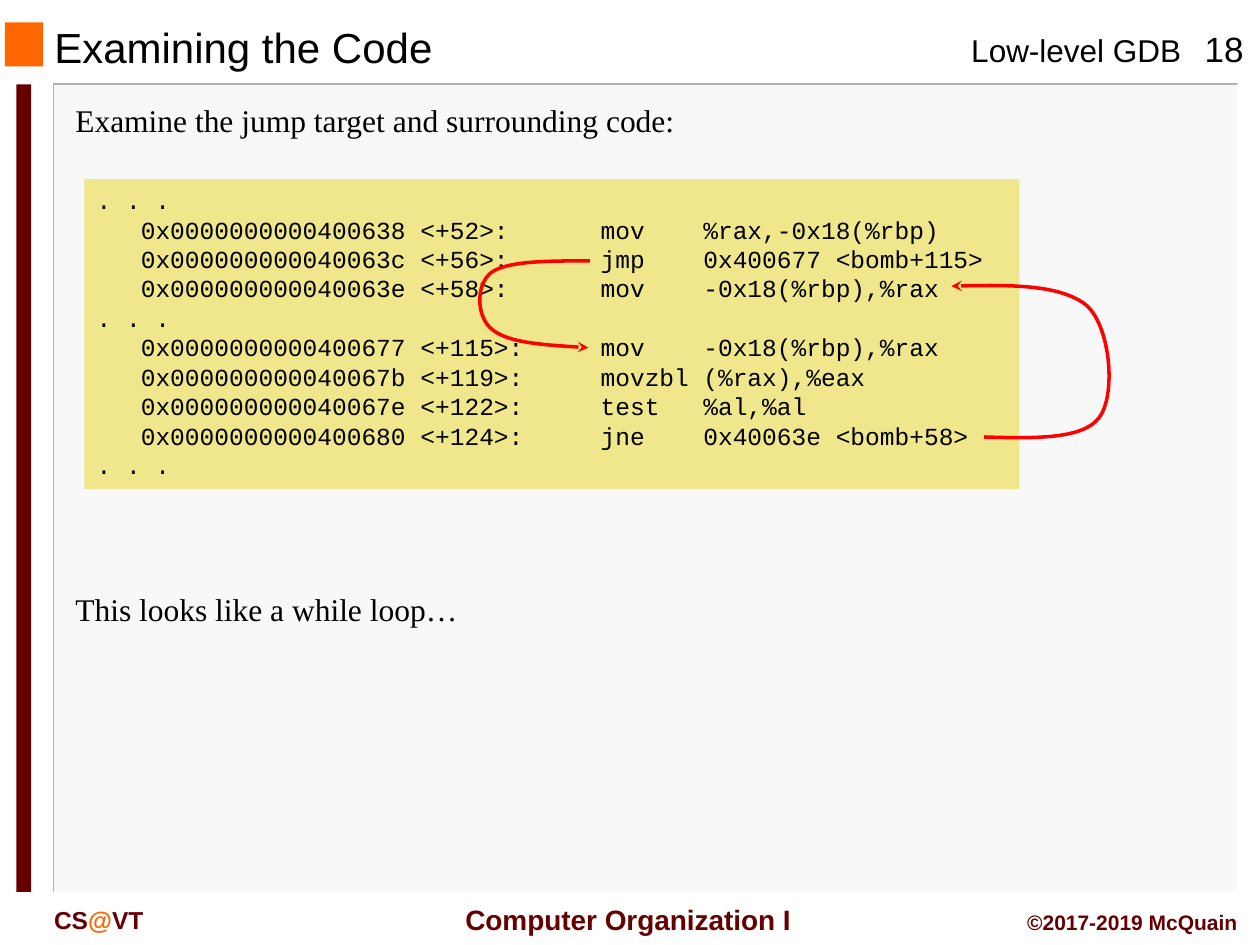
from lxml import etree
from pptx import Presentation
from pptx.dml.color import RGBColor
from pptx.enum.shapes import MSO_SHAPE
from pptx.enum.text import MSO_ANCHOR as Anchor, MSO_AUTO_SIZE as AutoSize, PP_ALIGN as Align
from pptx.oxml.ns import qn
from pptx.util import Cm, Pt

THEME = {
    "text": "000000", "maroon": "660000", "orange": "FF6600", "panel": "F8F8F8",
    "shade": "B2B2B2", "light": "FFFFFF", "code": "F0E68C", "arrow": "FF0000",
    "sans": "Arial", "serif": "Times New Roman", "mono": "Courier New",
    "title_size": 24, "number_size": 20, "body_size": 18, "course_size": 16,
    "code_size": 14, "credit_size": 12,
}

TITLE = "Examining the Code"
TOPIC = "Low-level GDB"
PAGE = "18"
COURSE = "Computer Organization I"
DEPARTMENT = [("CS", "maroon"), ("@", "orange"), ("VT", "maroon")]
CREDIT = "©2017-2019 McQuain"
INTRO = "Examine the jump target and surrounding code:"
CONCLUSION = "This looks like a while loop…"

GAP = (". . .",)
LISTING = [
    GAP,
    ("0x0000000000400638 <+52>:", "mov", "%rax,-0x18(%rbp)"),
    ("0x000000000040063c <+56>:", "jmp", "0x400677 <bomb+115>"),
    ("0x000000000040063e <+58>:", "mov", "-0x18(%rbp),%rax"),
    GAP,
    ("0x0000000000400677 <+115>:", "mov", "-0x18(%rbp),%rax"),
    ("0x000000000040067b <+119>:", "movzbl", "(%rax),%eax"),
    ("0x000000000040067e <+122>:", "test", "%al,%al"),
    ("0x0000000000400680 <+124>:", "jne", "0x40063e <bomb+58>"),
    GAP,
]
LISTING_STOPS = (0.89, 10.16, 12.23)  # address, instruction, operands

# Start point, then two control points and an end point per curve, in cm
JUMPS = [
    [(11.89, 5.26), (11.05, 5.26), (10.24, 5.26), (9.91, 5.49),
     (9.58, 5.74), (9.6, 6.4), (9.93, 6.65),
     (10.26, 6.91), (11.05, 6.96), (11.86, 7.01)],
    [(19.84, 8.81), (20.83, 8.84), (21.82, 8.86), (22.15, 8.43),
     (22.5, 8.0), (22.4, 6.63), (21.92, 6.17),
     (21.41, 5.74), (20.29, 5.74), (19.18, 5.77)],
]

PANEL = (1.08, 1.7, 23.88, 16.28)


def color(name):
    return RGBColor.from_string(THEME[name])


def write(shape, paragraphs, *, size, font="sans", ink="text", bold=False,
          align=Align.LEFT, anchor=Anchor.TOP, wrap=True):
    """Fill a shape with paragraphs: each a string or a list of (text, colour) runs."""
    frame = shape.text_frame
    frame.word_wrap, frame.auto_size, frame.vertical_anchor = wrap, AutoSize.NONE, anchor
    for index, content in enumerate(paragraphs):
        paragraph = frame.add_paragraph() if index else frame.paragraphs[0]
        paragraph.alignment = align
        for words, run_ink in [(content, ink)] if isinstance(content, str) else content:
            run = paragraph.add_run()
            run.text = words
            run.font.name, run.font.size, run.font.bold = THEME[font], Pt(THEME[size]), bold
            run.font.color.rgb = color(run_ink)
    return frame


def add_text(slide, box, content, **style):
    return write(slide.shapes.add_textbox(*map(Cm, box)), [content], **style)


def add_block(slide, box, fill):
    block = slide.shapes.add_shape(MSO_SHAPE.RECTANGLE, *map(Cm, box))
    block.shadow.inherit = False
    block.fill.solid()
    block.fill.fore_color.rgb = color(fill)
    block.line.fill.background()
    return block


def add_path(slide, points, ink, width):
    """Draw an open, unfilled outline through points given in cm."""
    start, *rest = [(Cm(x), Cm(y)) for x, y in points]
    builder = slide.shapes.build_freeform(*start)
    builder.add_line_segments(rest, close=False)
    outline = builder.convert_to_shape()
    outline.shadow.inherit = False
    outline.fill.background()
    outline.line.color.rgb = color(ink)
    outline.line.width = Pt(width)
    return outline


def add_jump(slide, points):
    """Draw a curved arrow by joining each three segments into one Bézier curve."""
    arrow = add_path(slide, points, "arrow", 2)
    segments = list(arrow._element.iter(qn("a:lnTo")))
    for first in range(0, len(segments), 3):
        curve = etree.Element(qn("a:cubicBezTo"))
        segments[first].addprevious(curve)
        for segment in segments[first:first + 3]:
            curve.append(segment[0])
            segment.getparent().remove(segment)
    etree.SubElement(arrow.line._get_or_add_ln(), qn("a:tailEnd"), type="stealth")


def add_listing(slide, box):
    lines = [parts[0] if parts is GAP else "\t" + "\t".join(parts) for parts in LISTING]
    frame = write(add_block(slide, box, "code"), lines, size="code_size", font="mono")
    for paragraph in frame.paragraphs:
        stops = etree.SubElement(paragraph._p.get_or_add_pPr(), qn("a:tabLst"))
        for stop in LISTING_STOPS:
            etree.SubElement(stops, qn("a:tab"), pos=str(Cm(stop)), algn="l")


def add_frame(slide):
    left, top, width, height = PANEL
    right, bottom = left + width, top + height
    add_block(slide, PANEL, "panel")
    add_path(slide, [(right, top), (left, top), (left, bottom)], "shade", 1)
    add_path(slide, [(right, top), (right, bottom), (left, bottom)], "light", 1)
    add_block(slide, (0.1, 0.45, 0.77, 0.89), "orange")
    add_block(slide, (0.33, top, 0.3, height), "maroon")
    add_text(slide, (19.33, 0.51, 4.8, 1.02), TOPIC, size="body_size", wrap=False)
    add_text(slide, (23.83, 0.43, 1.7, 1.09), PAGE, size="number_size", align=Align.CENTER)
    footer = {"ink": "maroon", "bold": True}
    add_text(slide, (8.92, 18.06, 7.49, 0.94), COURSE, size="course_size",
             align=Align.CENTER, anchor=Anchor.MIDDLE, wrap=False, **footer)
    add_text(slide, (0.84, 18.11, 3.81, 0.84), DEPARTMENT, size="code_size", **footer)
    add_text(slide, (17.78, 18.21, 7.42, 0.76), CREDIT, size="credit_size",
             align=Align.RIGHT, **footer)


def main():
    deck = Presentation()
    deck.slide_width, deck.slide_height = Cm(25.4), Cm(19.05)
    slide = deck.slides.add_slide(deck.slide_layouts[5])

    add_frame(slide)
    title = slide.shapes.title
    title.left, title.top, title.width, title.height = map(Cm, (0.84, 0.46, 16.08, 0.97))
    write(title, [TITLE], size="title_size", anchor=Anchor.MIDDLE)

    add_text(slide, (1.27, 1.91, 23.5, 1.02), INTRO, size="body_size", font="serif")
    add_listing(slide, (1.7, 3.61, 18.85, 6.25))
    add_text(slide, (1.27, 11.76, 23.5, 1.02), CONCLUSION, size="body_size", font="serif")
    for points in JUMPS:
        add_jump(slide, points)

    deck.save("out.pptx")


if __name__ == "__main__":
    main()
